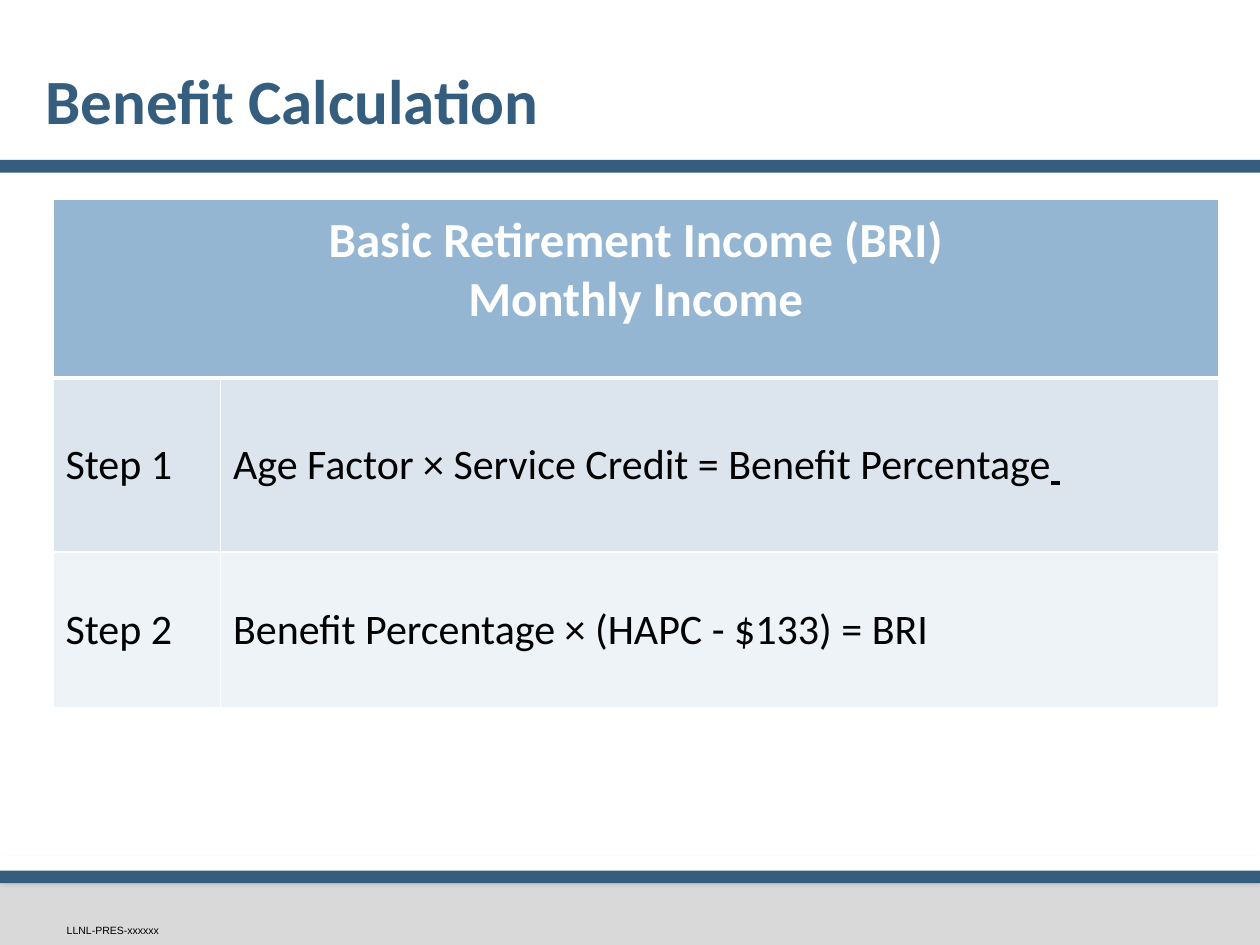
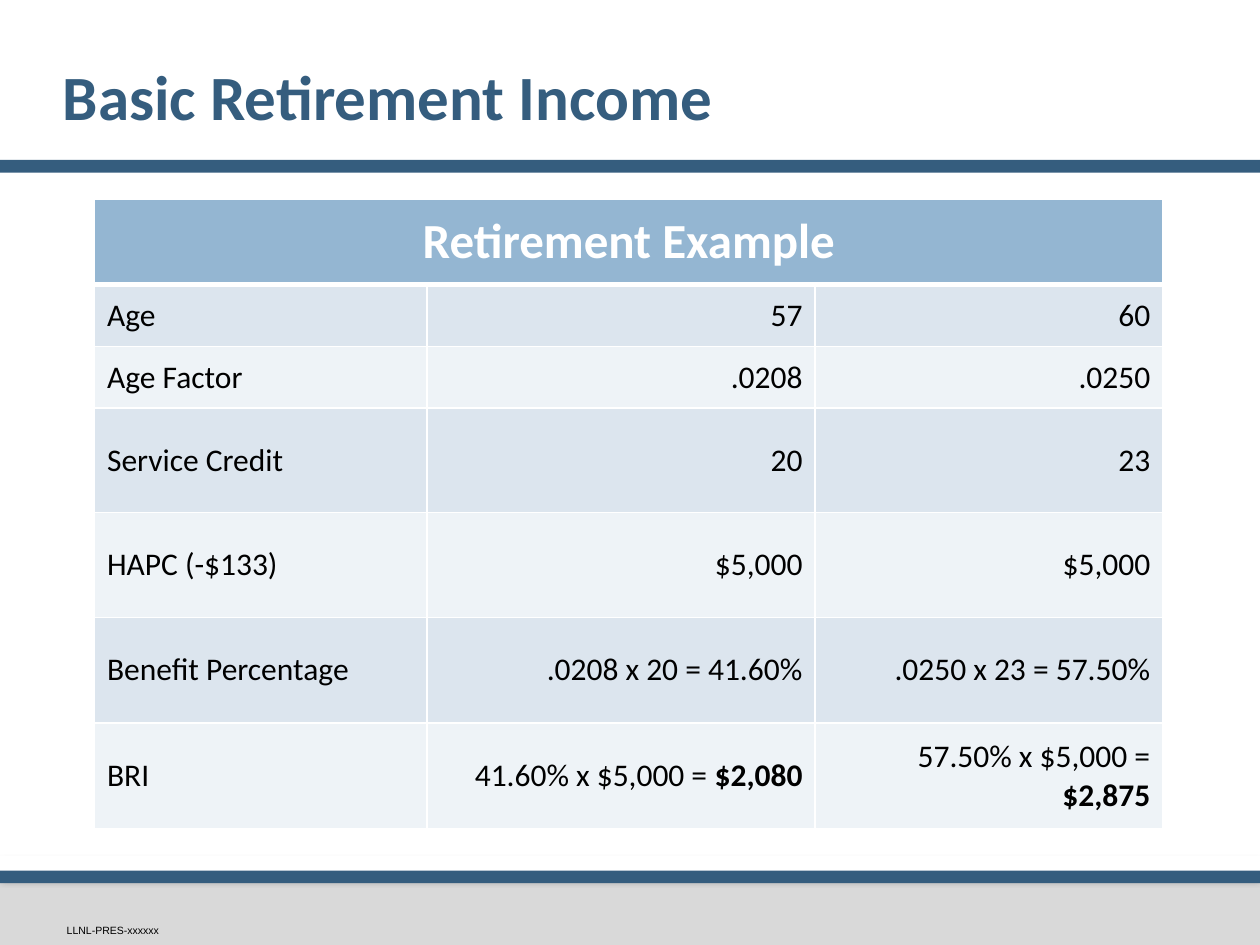
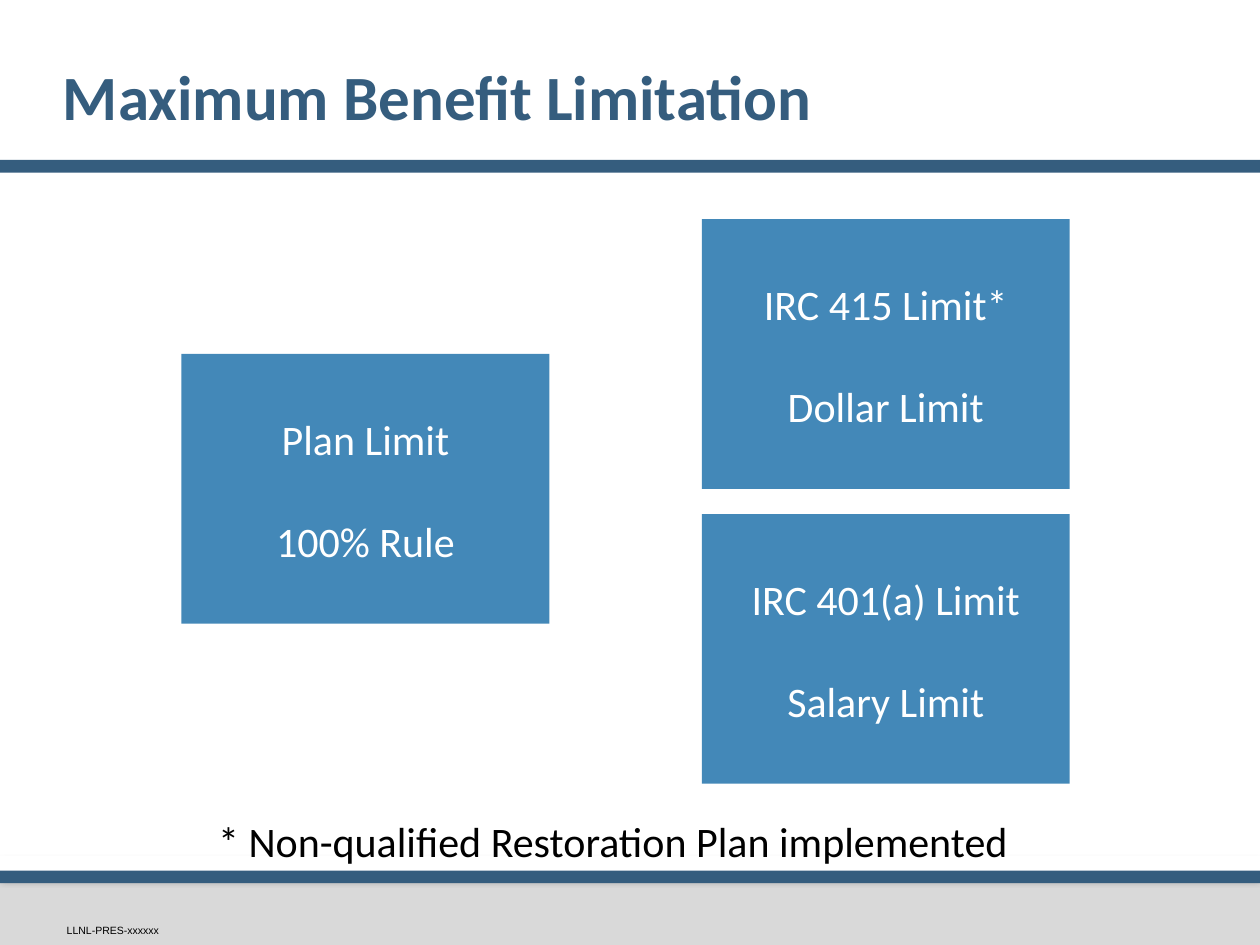
from dataclasses import dataclass
from lxml import etree
from pptx import Presentation
from pptx.dml.color import RGBColor
from pptx.enum import shapes, text
from pptx.oxml.ns import qn
from pptx.util import Inches, Pt

LEFT, MID, RIGHT = text.PP_ALIGN.LEFT, text.PP_ALIGN.CENTER, text.PP_ALIGN.RIGHT
ANCHOR = text.MSO_ANCHOR


@dataclass(frozen=True)
class Theme:
    # Colours
    navy: str = "355D7E"
    blue: str = "4388B8"
    head: str = "94B6D2"
    odd: str = "DCE5EE"
    even: str = "EEF3F7"
    gray: str = "D9D9D9"
    white: str = "FFFFFF"
    black: str = "000000"
    # Fonts and sizes
    font: str = "Calibri"
    mark: str = "Arial"
    title: float = 36
    lead: float = 38.2
    band: float = 28
    body: float = 24
    small: float = 18
    tiny: float = 6
    gap: float = 29.3  # one body line


T = Theme()


def style(para, size, color, bold=False, align=LEFT, face=T.font):
    para.alignment = align
    font = para.font
    font.name, font.size, font.bold = face, Pt(size), bold
    font.color.rgb = RGBColor.from_string(color)


def pad(frame, left=0.1, top=0.05, right=0.1, bottom=0.05):
    frame.margin_left, frame.margin_top = Inches(left), Inches(top)
    frame.margin_right, frame.margin_bottom = Inches(right), Inches(bottom)


def write(frame, lines, size, color, gap=0, **look):
    for i, line in enumerate(lines):
        para = frame.paragraphs[0] if i == 0 else frame.add_paragraph()
        para.text = line
        style(para, size, color, **look)
        if i and gap:
            para.space_before = Pt(gap)


def label(slide, box, line, size, color, anchor=ANCHOR.TOP, inset=None, **look):
    frame = slide.shapes.add_textbox(*map(Inches, box)).text_frame
    frame.word_wrap = True
    frame.vertical_anchor = anchor
    pad(frame, *(inset or ()))
    write(frame, [line], size, color, **look)
    return frame


def rect(slide, box, color):
    shape = slide.shapes.add_shape(shapes.MSO_SHAPE.RECTANGLE, *map(Inches, box))
    shape.shadow.inherit = False
    shape.fill.solid()
    shape.fill.fore_color.rgb = RGBColor.from_string(color)
    shape.line.fill.background()
    return shape


def shade(shape, alpha, blur, dist):
    """Cast a black shadow straight down; blur and distance in points."""
    effects = shape._element.spPr.find(qn("a:effectLst"))
    cast = etree.SubElement(effects, qn("a:outerShdw"), blurRad=str(Pt(blur)),
                            dist=str(Pt(dist)), dir="5400000", rotWithShape="0")
    tint = etree.SubElement(cast, qn("a:srgbClr"), val=T.black)
    etree.SubElement(tint, qn("a:alpha"), val=str(alpha * 1000))


def frame_slide(deck, title, box=(0.5, 0.24, 9, 1.1)):
    slide = deck.slides.add_slide(deck.slide_layouts[6])
    # Footer band, and the strip that shades it
    shade(rect(slide, (0, 6.95, 10, 0.55), T.gray), 38, 3.1, 2)
    shade(rect(slide, (0, 6.79, 10, 0.16), T.white), 25, 4, 3)
    # Rules
    for top in (6.91, 1.27):
        rect(slide, (0, top, 10, 0.1), T.navy)
    # Document number
    label(slide, (0.53, 7.33, 0.96, 0.1), "LLNL-PRES-xxxxxx", T.tiny, T.black,
          ANCHOR.BOTTOM, (0, 0, 0, 0), face=T.mark)
    # Title
    frame = label(slide, box, title, T.title, T.navy, ANCHOR.MIDDLE,
                  (0, 0.05, 0.05, 0.05), bold=True)
    frame.paragraphs[0].line_spacing = Pt(T.lead)
    return slide


def dress(cell, color, row):
    """Give a cell its fill and white borders, thick under the header."""
    props = cell._tc.get_or_add_tcPr()
    widths = {"L": 1, "R": 1, "T": 3 if row == 1 else 1, "B": 3 if row == 0 else 1}
    for side, width in widths.items():
        line = etree.SubElement(props, qn(f"a:ln{side}"), w=str(Pt(width)))
        fill = etree.SubElement(line, qn("a:solidFill"))
        etree.SubElement(fill, qn("a:srgbClr"), val=T.white)
    cell.fill.solid()
    cell.fill.fore_color.rgb = RGBColor.from_string(color)
    cell.vertical_anchor = ANCHOR.MIDDLE


def grid(slide, spot, cols, highs, head, rows, size, align=LEFT, foot=0.05):
    """Table with a merged header; a cell is a string or (plain, marked, font flag)."""
    box = (*spot, sum(cols), sum(highs))
    table = slide.shapes.add_table(len(highs), len(cols), *map(Inches, box)).table
    table.first_row = table.horz_banding = False
    for col, width in zip(table.columns, cols):
        col.width = Inches(width)
    for row, high in zip(table.rows, highs):
        row.height = Inches(high)
    for r in range(len(highs)):
        color = T.head if r == 0 else (T.even, T.odd)[r % 2]
        for c in range(len(cols)):
            dress(table.cell(r, c), color, r)
    # Header
    first = table.cell(0, 0)
    first.merge(table.cell(0, len(cols) - 1))
    pad(first, bottom=foot)
    write(first.text_frame, head, T.band, T.white, bold=True, align=MID)
    # Body
    for r, row in enumerate(rows, 1):
        for c, entry in enumerate(row):
            plain, *rest = (entry,) if isinstance(entry, str) else entry
            frame = table.cell(r, c).text_frame
            write(frame, [plain], size, T.black, align=align if c else LEFT)
            if rest:
                run = frame.paragraphs[0].add_run()
                run.text = rest[0]
                setattr(run.font, rest[1], True)


def calc(deck):
    slide = frame_slide(deck, "Benefit Calculation", (0.36, 0.36, 9, 0.93))
    grid(slide, (0.42, 1.58), (1.33, 7.92), (1.42, 1.38, 1.24),
         ["Basic Retirement Income (BRI)", "Monthly Income"],
         [("Step 1", ("Age Factor × Service Credit = Benefit Percentage", " ", "underline")),
          ("Step 2", "Benefit Percentage × (HAPC - $133) = BRI")],
         T.body, foot=0.34)


def sample(deck):
    slide = frame_slide(deck, "Basic Retirement Income")
    grid(slide, (0.75, 1.58), (2.64, 3.08, 2.76),
         (0.68, 0.49, 0.49, 0.83, 0.83, 0.84, 0.84), ["Retirement Example"],
         [("Age", "57", "60"),
          ("Age Factor", ".0208", ".0250"),
          ("Service Credit", "20", "23"),
          ("HAPC (-$133)", "$5,000", "$5,000"),
          ("Benefit Percentage", ".0208 x 20 = 41.60%", ".0250 x 23 = 57.50%"),
          ("BRI", ("41.60% x $5,000 = ", "$2,080", "bold"),
           ("57.50% x $5,000 = ", "$2,875", "bold"))],
         T.small, align=RIGHT)


def limits(deck):
    slide = frame_slide(deck, "Maximum Benefit Limitation")
    # Footnote
    label(slide, (1.19, 6.42, 7.35, 0.5), "* Non-qualified Restoration Plan implemented",
          T.body, T.black, align=MID)
    # Limit boxes
    for left, top, *lines in ((1.44, 2.81, "Plan Limit", "100% Rule"),
                              (5.57, 1.74, "IRC 415 Limit*", "Dollar Limit"),
                              (5.57, 4.08, "IRC 401(a) Limit", "Salary Limit")):
        frame = rect(slide, (left, top, 2.92, 2.14), T.blue).text_frame
        frame.word_wrap = True
        frame.vertical_anchor = ANCHOR.BOTTOM
        pad(frame, bottom=0.46)
        write(frame, lines, T.body, T.white, gap=T.gap, align=MID)


def main():
    deck = Presentation()
    deck.slide_width, deck.slide_height = Inches(10), Inches(7.5)
    for build in (calc, sample, limits):
        build(deck)
    deck.save("out.pptx")


if __name__ == "__main__":
    main()
